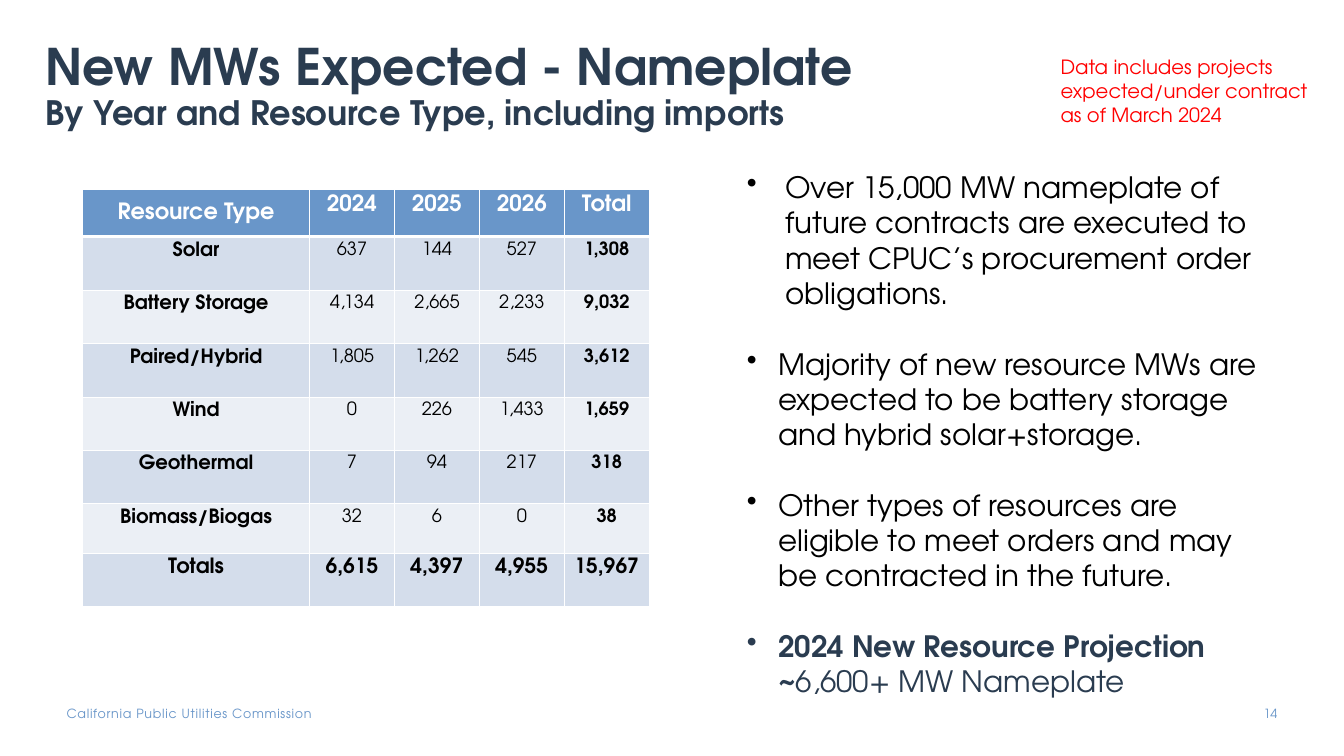
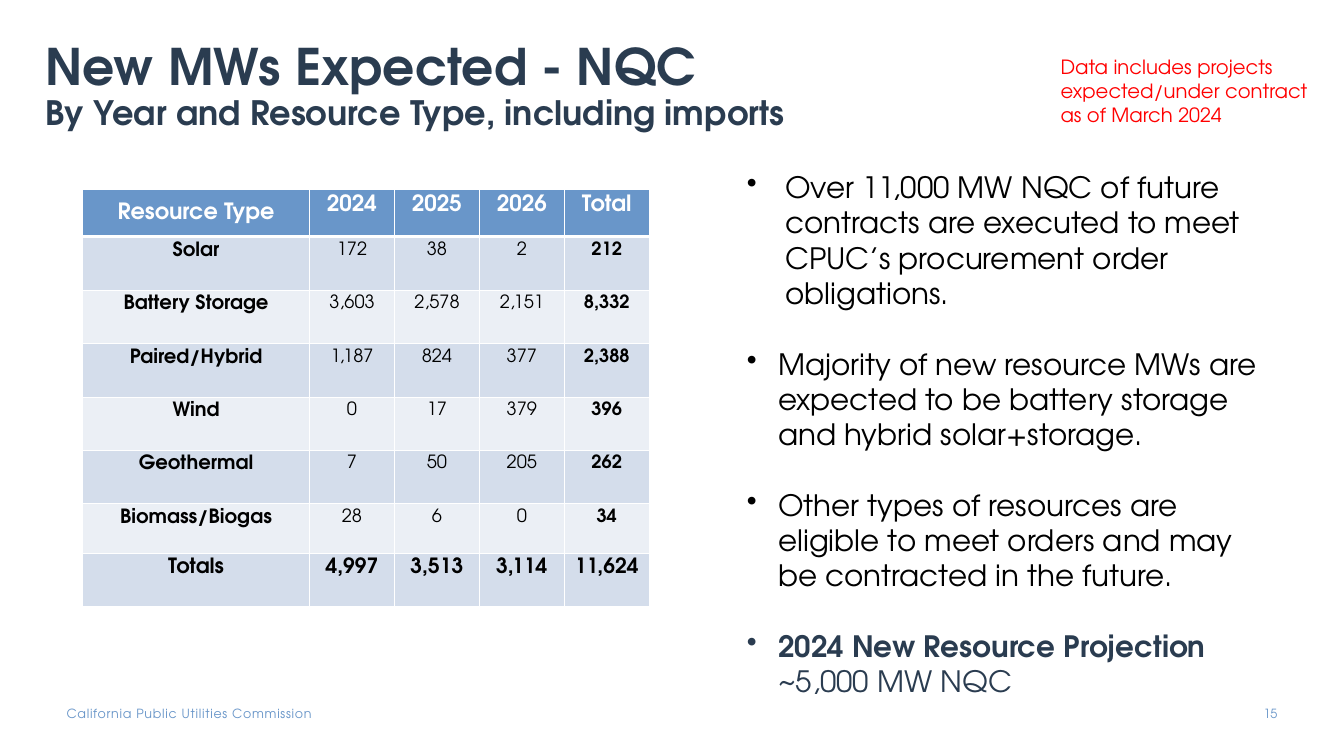
import pptx
import pptx.dml.color
import pptx.enum.text
import pptx.oxml.ns
import pptx.util
from dataclasses import dataclass
from lxml import etree

# Content
FOOTER = "California Public Utilities Commission"
SUBTITLE = "By Year and Resource Type, including imports"
NOTICE = ["Data includes projects", "expected/under contract", "as of March 2024"]
YEARS = ["2024", "2025", "2026"]
RESOURCES = ["Solar", "Battery Storage", "Paired/Hybrid", "Wind", "Geothermal",
             "Biomass/Biogas"]
SHARED_POINTS = [
    "Majority of new resource MWs are expected to be battery storage and hybrid "
    "solar+storage.",
    "Other types of resources are eligible to meet orders and may be contracted "
    "in the future.",
]
PAGES = [
    {
        "number": "14",
        "title": "New MWs Expected - Nameplate",
        "megawatts": [(637, 144, 527), (4134, 2665, 2233), (1805, 1262, 545),
                      (0, 226, 1433), (7, 94, 217), (32, 6, 0)],
        "lead": "Over 15,000 MW nameplate of future contracts are executed to meet "
                "CPUC’s procurement order obligations.",
        "projection": ("2024 New Resource Projection ~", "6,600+ MW Nameplate"),
    },
    {
        "number": "15",
        "title": "New MWs Expected - NQC",
        "megawatts": [(172, 38, 2), (3603, 2578, 2151), (1187, 824, 377),
                      (0, 17, 379), (7, 50, 205), (28, 6, 0)],
        "lead": "Over 11,000 MW NQC of future contracts are executed to meet "
                "CPUC’s procurement order obligations.",
        "projection": ("2024 New Resource Projection ", "~5,000 MW NQC"),
    },
]


@dataclass(frozen=True)
class Theme:
    font: str = "TeX Gyre Adventor"
    navy: str = "2A3C50"
    blue: str = "6996C9"
    band_dark: str = "D4DDEB"
    band_light: str = "EBEFF5"
    red: str = "FF0000"
    black: str = "000000"
    white: str = "FFFFFF"
    title: int = 36
    subtitle: int = 24
    body: int = 21
    header: int = 16
    totals: int = 15
    label: int = 14
    value: int = 13
    footer: int = 9
    thin: float = 0.86
    thick: float = 2.58


THEME = Theme()
WIDTH, HEIGHT = 13.33, 7.5

# Layout: left, top, width, height
TITLE_AREA = (0.45, 0, 12, 1.37)
NOTICE_AREA = (10.42, 0.5, WIDTH - 10.42, 0.81)
POINTS_AREA = (7.31, 1.63, 5.27, HEIGHT - 1.63)
FOOTER_AREA = (0.66, 7, 3.21, 0.15)
NUMBER_AREA = (12.25, 7, 0.42, 0.2)
TABLE_LEFT, TABLE_TOP, TABLE_WIDTH = 0.82, 1.88, 5.62
LABEL_WIDTH = 2.25
ROW_HEIGHTS = [0.47] + [0.53] * 5 + [0.49, 0.53]

ALIGN = pptx.enum.text.PP_ALIGN
ANCHOR = pptx.enum.text.MSO_ANCHOR
inches = pptx.util.Inches


def rgb(colour):
    return pptx.dml.color.RGBColor.from_string(colour)


def write(frame, text, align=ALIGN.LEFT, line_spacing=None, before=0, hang=0, **format):
    """Add one paragraph; text is a string or a list of (string, format) spans."""
    fresh = len(frame.paragraphs) == 1 and not frame.paragraphs[0].runs
    para = frame.paragraphs[0] if fresh else frame.add_paragraph()
    para.alignment = align
    para.space_before = pptx.util.Pt(before)
    if line_spacing:
        para.line_spacing = line_spacing
    for words, changes in [(text, {})] if isinstance(text, str) else text:
        look = {"size": THEME.body, "colour": THEME.black, "bold": False,
                "tracking": 0, **format, **changes}
        span = para.add_run()
        span.text = words.rstrip("\n")
        span.font.name = THEME.font
        span.font.size = pptx.util.Pt(look["size"])
        span.font.bold = look["bold"]
        span.font.color.rgb = rgb(look["colour"])
        if look["tracking"]:
            span.font._element.set("spc", str(int(look["tracking"] * 100)))
        if words.endswith("\n"):
            para.add_line_break()
    if hang:
        properties = para._p.get_or_add_pPr()
        properties.set("marL", str(inches(hang)))
        properties.set("indent", str(-inches(hang)))
        bullet = etree.SubElement(properties, pptx.oxml.ns.qn("a:buChar"))
        bullet.set("char", "•")


def add_frame(page, area, margins=(0.1, 0.05, 0.1, 0.05), anchor=ANCHOR.TOP):
    box = page.shapes.add_textbox(*map(inches, area))
    frame = box.text_frame
    frame.word_wrap = True
    frame.vertical_anchor = anchor
    (frame.margin_left, frame.margin_top,
     frame.margin_right, frame.margin_bottom) = map(inches, margins)
    return frame


def add_borders(cell, **widths):
    properties = cell._tc.get_or_add_tcPr()
    for side in "LRTB":
        line = etree.SubElement(properties, pptx.oxml.ns.qn("a:ln" + side))
        line.set("w", str(pptx.util.Pt(widths.get(side, THEME.thin))))
        fill = etree.SubElement(line, pptx.oxml.ns.qn("a:solidFill"))
        etree.SubElement(fill, pptx.oxml.ns.qn("a:srgbClr")).set("val", THEME.white)


def table_rows(megawatts):
    rows = [[name, *values, sum(values)] for name, values in zip(RESOURCES, megawatts)]
    totals = [sum(column) for column in list(zip(*rows))[1:]]
    return [["Resource Type", *YEARS, "Total"], *rows, ["Totals", *totals]]


def add_resource_table(page, megawatts):
    rows = table_rows(megawatts)
    last_row, last_column = len(rows) - 1, len(rows[0]) - 1
    table = page.shapes.add_table(
        len(rows), len(rows[0]), inches(TABLE_LEFT), inches(TABLE_TOP),
        inches(TABLE_WIDTH), inches(sum(ROW_HEIGHTS))).table
    table.horz_banding = False
    for index, column in enumerate(table.columns):
        share = (TABLE_WIDTH - LABEL_WIDTH) / last_column
        column.width = inches(share if index else LABEL_WIDTH)
    for r, row in enumerate(rows):
        table.rows[r].height = inches(ROW_HEIGHTS[r])
        for c, value in enumerate(row):
            cell = table.cell(r, c)
            edges = {0: {"B": THEME.thick}, 1: {"T": THEME.thick}}.get(r, {})
            add_borders(cell, **edges)
            band = THEME.band_dark if r % 2 else THEME.band_light
            cell.fill.solid()
            cell.fill.fore_color.rgb = rgb(band if r else THEME.blue)
            cell.vertical_anchor = ANCHOR.TOP if r or c else ANCHOR.MIDDLE
            size = {0: THEME.header, last_row: THEME.totals}.get(
                r, THEME.value if c else THEME.label)
            write(cell.text_frame, value if isinstance(value, str) else f"{value:,}",
                  align=ALIGN.CENTER, size=size,
                  colour=THEME.black if r else THEME.white,
                  bold=r in (0, last_row) or c in (0, last_column))


def add_points(page, lead, projection):
    frame = add_frame(page, POINTS_AREA)
    gap = THEME.body * 1.2
    write(frame, lead, hang=0.38)
    for point in SHARED_POINTS:
        write(frame, point, hang=0.31, before=gap)
    heading, amount = projection
    write(frame, [(heading, {"bold": True}), (amount, {})],
          hang=0.31, before=gap, colour=THEME.navy)


def add_shared_parts(page, title, number):
    # Title and subtitle
    write(add_frame(page, TITLE_AREA, (0, 0.05, 0.1, 0.05), ANCHOR.BOTTOM),
          [(title + "\n", {"size": THEME.title}), (SUBTITLE, {"size": THEME.subtitle})],
          line_spacing=0.9, colour=THEME.navy, bold=True)
    # Notice at the top right
    notice = add_frame(page, NOTICE_AREA)
    for line in NOTICE:
        write(notice, line, size=THEME.label, colour=THEME.red)
    # Footer and page number
    flush = (0, 0, 0, 0)
    write(add_frame(page, FOOTER_AREA, flush), FOOTER,
          size=THEME.footer, colour=THEME.blue, tracking=0.5)
    write(add_frame(page, NUMBER_AREA, flush), number, align=ALIGN.RIGHT,
          size=THEME.footer, colour=THEME.blue)


def main():
    deck = pptx.Presentation()
    deck.slide_width, deck.slide_height = inches(WIDTH), inches(HEIGHT)
    for content in PAGES:
        page = deck.slides.add_slide(deck.slide_layouts[6])
        add_shared_parts(page, content["title"], content["number"])
        add_resource_table(page, content["megawatts"])
        add_points(page, content["lead"], content["projection"])
    deck.save("out.pptx")


if __name__ == "__main__":
    main()
